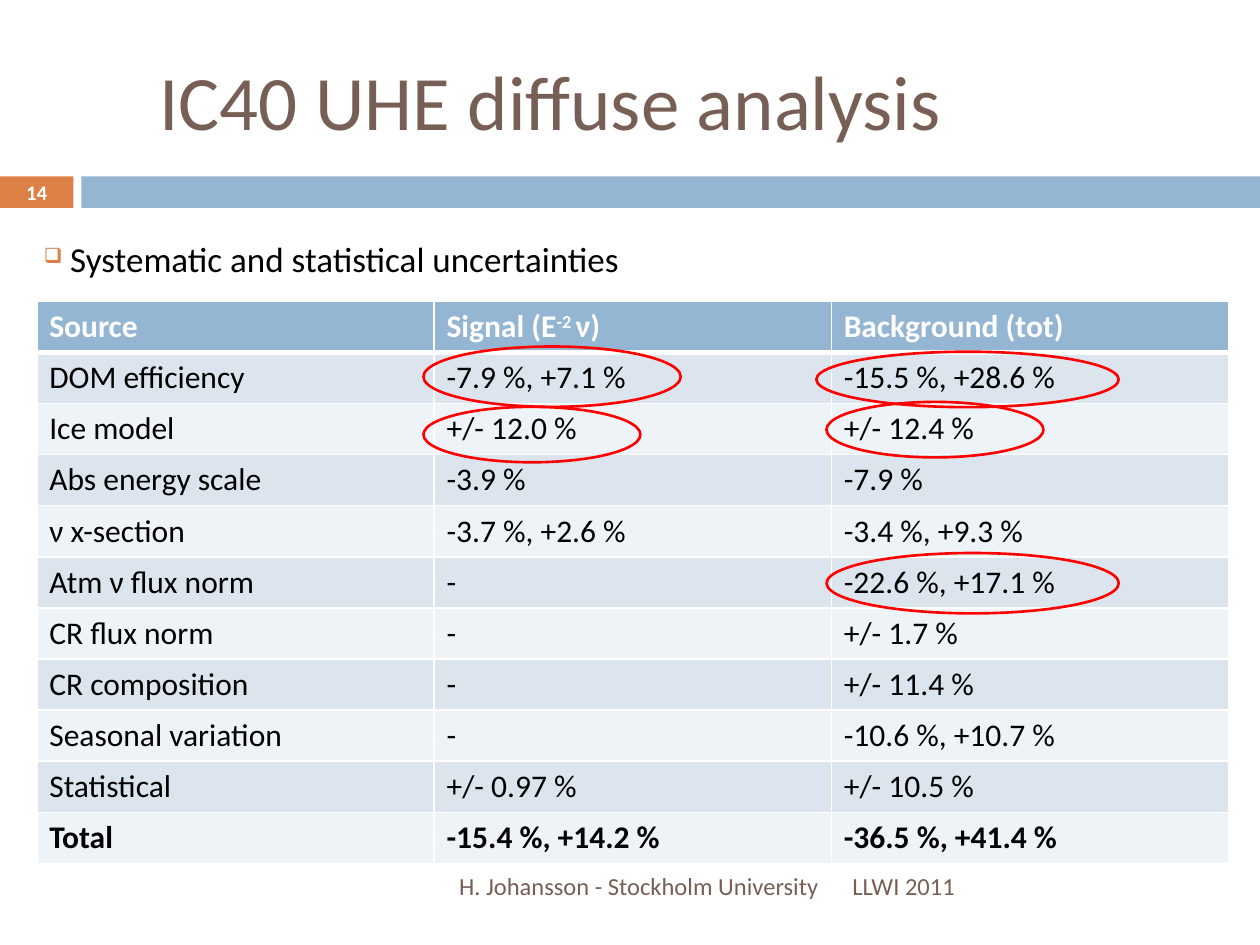
from lxml import etree
from pptx import Presentation
from pptx import util as u
from pptx.dml.color import RGBColor
from pptx.enum import shapes, text
from pptx.oxml import ns

Pt = u.Pt
FONT = "Calibri"
ORANGE = RGBColor(0xDD, 0x80, 0x47)
BLUE = RGBColor(0x94, 0xB6, 0xD2)
BROWN = RGBColor(0x77, 0x5F, 0x55)
BAND_DARK = RGBColor(0xDC, 0xE5, 0xEE)
BAND_LIGHT = RGBColor(0xEE, 0xF3, 0xF7)
RED = RGBColor(0xFF, 0x00, 0x00)
BLACK = RGBColor(0x00, 0x00, 0x00)
WHITE = RGBColor(0xFF, 0xFF, 0xFF)


def write(frame, content, size, color=BLACK, bold=False, align=text.PP_ALIGN.LEFT, anchor=None):
    if anchor is not None:
        frame.word_wrap = True
        frame.vertical_anchor = anchor
    paragraph = frame.paragraphs[0]
    paragraph.alignment = align
    for index, part in enumerate(content.split("^")):
        run = paragraph.add_run()
        run.text = part
        run.font.name = FONT
        run.font.size = Pt(size)
        run.font.bold = bold
        run.font.color.rgb = color
        if index % 2:
            run.font._element.set("baseline", "30000")
    return paragraph


def add_border(cell, side, width):
    properties = cell._tc.get_or_add_tcPr()
    line = etree.SubElement(properties, ns.qn(f"a:{side}"), w=str(Pt(width)))
    fill = etree.SubElement(line, ns.qn("a:solidFill"))
    etree.SubElement(fill, ns.qn("a:srgbClr"), val=str(WHITE))


presentation = Presentation()
presentation.slide_width = Pt(720)
presentation.slide_height = Pt(540)
slide = presentation.slides.add_slide(presentation.slide_layouts[5])
middle = text.MSO_ANCHOR.MIDDLE

for left, width, color in [(0, 42, ORANGE), (46.5, 673.5, BLUE)]:
    bar = slide.shapes.add_shape(shapes.MSO_SHAPE.RECTANGLE, Pt(left), Pt(100.8), Pt(width), Pt(18))
    bar.shadow.inherit = False
    bar.fill.solid()
    bar.fill.fore_color.rgb = color
    bar.line.fill.background()

title = slide.shapes.title
title.left, title.top, title.width, title.height = Pt(84), Pt(18), Pt(606), Pt(78)
write(title.text_frame, "IC40 UHE diffuse analysis", 44, color=BROWN, anchor=middle)

labels = [
    ("LLWI 2011", 480, 492, 210, 28.8, 14, BROWN, False, text.PP_ALIGN.LEFT),
    ("H. Johansson - Stockholm University", 48, 492, 427, 28.8, 14, BROWN, False, text.PP_ALIGN.RIGHT),
    ("14", 0, 100, 42, 19.6, 11.9, WHITE, True, text.PP_ALIGN.CENTER),
]
for content, left, top, width, height, size, color, bold, align in labels:
    label = slide.shapes.add_textbox(Pt(left), Pt(top), Pt(width), Pt(height))
    write(label.text_frame, content, size, color=color, bold=bold, align=align, anchor=middle)

rows = [
    ("Source", "Signal (E^-2 ^ν)", "Background (tot)"),
    ("DOM efficiency", "-7.9 %, +7.1 %", "-15.5 %, +28.6 %"),
    ("Ice model", "+/- 12.0 %", "+/- 12.4 %"),
    ("Abs energy scale", "-3.9 %", "-7.9 %"),
    ("ν x-section", "-3.7 %, +2.6 %", "-3.4 %, +9.3 %"),
    ("Atm ν flux norm", "-", "-22.6 %, +17.1 %"),
    ("CR flux norm", "-", "+/- 1.7 %"),
    ("CR composition", "-", "+/- 11.4 %"),
    ("Seasonal variation", "-", "-10.6 %, +10.7 %"),
    ("Statistical", "+/- 0.97 %", "+/- 10.5 %"),
    ("Total", "-15.4 %, +14.2 %", "-36.5 %, +41.4 %"),
]
row_height = 29.2
table = slide.shapes.add_table(
    len(rows), 3, Pt(21), Pt(172.2), Pt(681), Pt(row_height * len(rows))
).table
for column in table.columns:
    column.width = Pt(227)
for row_index, values in enumerate(rows):
    table.rows[row_index].height = Pt(row_height)
    header = row_index == 0
    band = BLUE if header else BAND_DARK if row_index % 2 else BAND_LIGHT
    for column_index, value in enumerate(values):
        cell = table.cell(row_index, column_index)
        write(cell.text_frame, value, 18, color=WHITE if header else BLACK,
              bold=header or row_index == len(rows) - 1)
        add_border(cell, "lnL", 1)
        add_border(cell, "lnR", 1)
        add_border(cell, "lnT", 3 if row_index == 1 else 1)
        add_border(cell, "lnB", 3 if header else 1)
        cell.fill.solid()
        cell.fill.fore_color.rgb = band

heading = slide.shapes.add_textbox(Pt(18), Pt(132), Pt(678), Pt(31.5))
paragraph = write(heading.text_frame, "Systematic and statistical uncertainties", 20,
                  anchor=text.MSO_ANCHOR.TOP)
properties = paragraph._p.get_or_add_pPr()
properties.set("marL", str(Pt(15)))
properties.set("indent", str(Pt(-15)))
bullet_color = etree.SubElement(properties, ns.qn("a:buClr"))
etree.SubElement(bullet_color, ns.qn("a:srgbClr"), val=str(ORANGE))
etree.SubElement(properties, ns.qn("a:buSzPct"), val="60000")
etree.SubElement(properties, ns.qn("a:buChar"), char="❑")

highlights = [
    (242, 232.5, 124, 31.7),
    (242, 198, 147, 34.5),
    (472.3, 229.7, 124, 31.7),
    (466.5, 201, 172.8, 31.7),
    (472.3, 316, 167, 34.5),
]
for left, top, width, height in highlights:
    ellipse = slide.shapes.add_shape(shapes.MSO_SHAPE.OVAL, Pt(left), Pt(top), Pt(width), Pt(height))
    ellipse.shadow.inherit = False
    ellipse.fill.background()
    ellipse.line.color.rgb = RED
    ellipse.line.width = Pt(1.5)

presentation.save("out.pptx")
